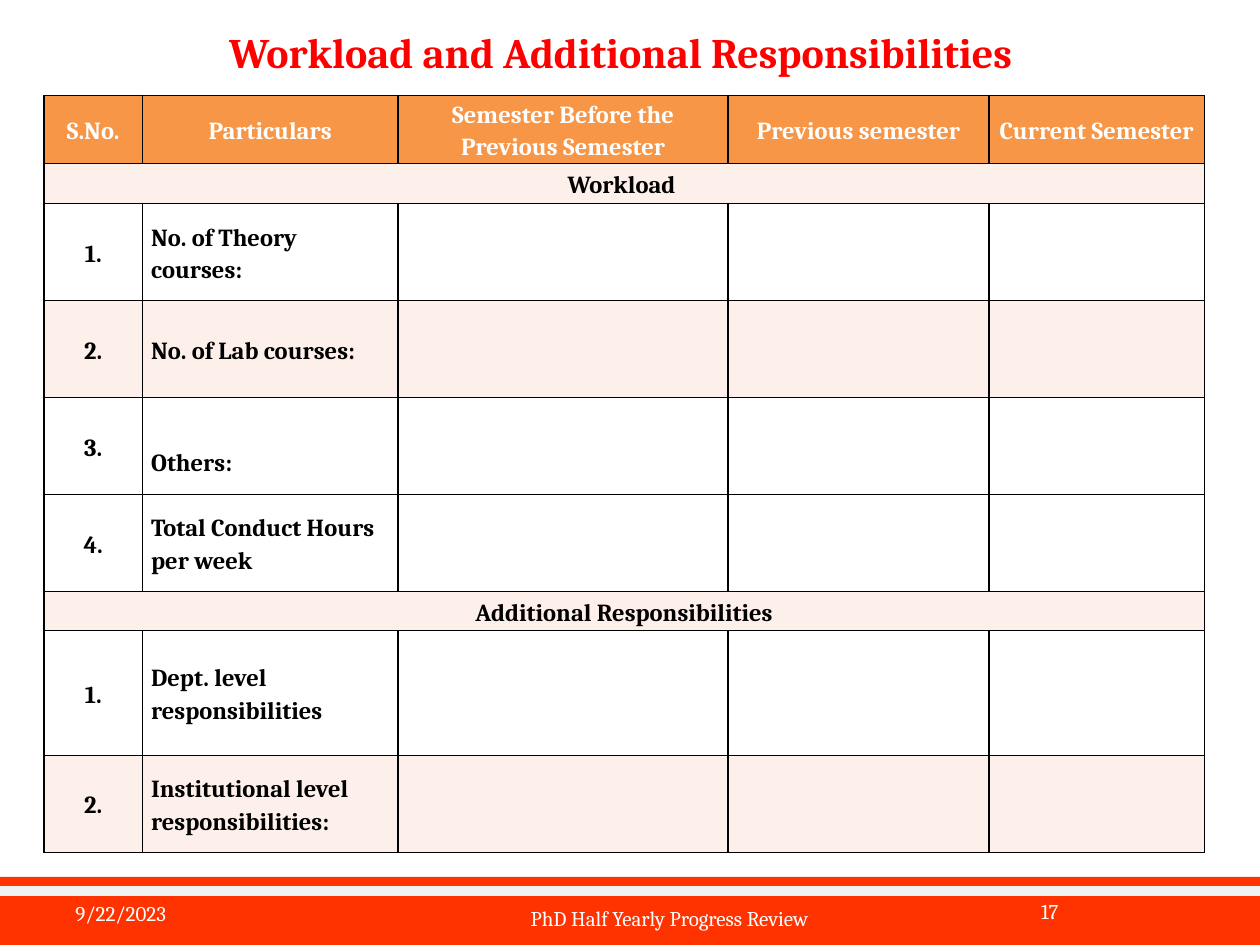
from lxml.etree import SubElement
from pptx import Presentation
from pptx.dml.color import RGBColor
from pptx.enum.shapes import MSO_CONNECTOR, MSO_SHAPE
from pptx.enum.text import MSO_ANCHOR, PP_ALIGN
from pptx.oxml.ns import qn
from pptx.util import Inches, Pt

RED = RGBColor(0xFF, 0x00, 0x00)
BAND = RGBColor(0xFF, 0x33, 0x00)
GRAY = RGBColor(0xF2, 0xF2, 0xF2)
ORANGE = RGBColor(0xF7, 0x96, 0x46)
PINK = RGBColor(0xFD, 0xEF, 0xE9)
WHITE = RGBColor(0xFF, 0xFF, 0xFF)
BLACK = RGBColor(0x00, 0x00, 0x00)


def write(frame, text, size, color, align, bold=False):
    para = frame.paragraphs[0]
    para.alignment = align
    run = para.add_run()
    run.text = text
    font = run.font
    font.name, font.size, font.bold = "Cambria", Pt(size), bold
    font.color.rgb = color
    return para


def border(cell):
    props = cell._tc.get_or_add_tcPr()
    for side in ("lnL", "lnR", "lnT", "lnB"):
        line = SubElement(props, qn(f"a:{side}"), w=str(Pt(1)))
        fill = SubElement(line, qn("a:solidFill"))
        SubElement(fill, qn("a:srgbClr"), val=str(BLACK))


prs = Presentation()
prs.slide_width, prs.slide_height = Inches(10), Inches(7.5)
slide = prs.slides.add_slide(prs.slide_layouts[6])
shapes = slide.shapes

# Footer band with its light stripe
band = shapes.add_shape(MSO_SHAPE.RECTANGLE, Inches(0), Inches(6.96),
                        Inches(10.02), Inches(0.57))
band.shadow.inherit = False
band.fill.solid()
band.fill.fore_color.rgb = BAND
band.line.fill.background()
stripe = shapes.add_connector(MSO_CONNECTOR.STRAIGHT, Inches(-0.02),
                              Inches(7.07), Inches(10), Inches(7.07))
stripe.line.color.rgb = GRAY
stripe.line.width = Pt(6)
SubElement(stripe._element.spPr, qn("a:effectLst"))

# Footer texts and title
LEFT, MID, RIGHT = PP_ALIGN.LEFT, PP_ALIGN.CENTER, PP_ALIGN.RIGHT
texts = [
    ("9/22/2023", (0.5, 7.1, 2.33, 0.4), 12, WHITE, LEFT),
    ("17", (7.33, 7.08, 1.17, 0.4), 12, WHITE, RIGHT),
    ("PhD Half Yearly Progress Review", (3.42, 7.14, 3.79, 0.4), 12, WHITE, MID),
    ("Workload and Additional Responsibilities", (0.28, 0.14, 9.29, 0.54),
     24, RED, MID),
]
for text, place, size, color, align in texts:
    box = shapes.add_textbox(*map(Inches, place))
    frame = box.text_frame
    frame.word_wrap = True
    title = color == RED
    frame.vertical_anchor = MSO_ANCHOR.MIDDLE if title else MSO_ANCHOR.TOP
    write(frame, text, size, color, align, title)

# Table rows: height, fill, texts
rows = [
    (0.46, ORANGE, ["S.No.", "Particulars", "Semester Before the Previous Semester",
                    "Previous semester", "Current Semester"]),
    (0.32, PINK, ["Workload "]),
    (0.77, WHITE, ["1.", "No. of Theory courses:"]),
    (0.77, PINK, ["2.", "No. of Lab courses:"]),
    (0.77, WHITE, ["3.", "Others:"]),
    (0.77, WHITE, ["4.", "Total Conduct Hours per week"]),
    (0.31, PINK, ["Additional Responsibilities"]),
    (0.99, WHITE, ["1.", "Dept. level responsibilities"]),
    (0.77, PINK, ["2.", "Institutional level responsibilities:"]),
]
widths = [0.78, 2.03, 2.62, 2.07, 1.71]
table = shapes.add_table(len(rows), len(widths), Inches(0.35), Inches(0.76),
                         Inches(sum(widths)), Inches(5.96)).table
for col, width in zip(table.columns, widths):
    col.width = Inches(width)

for r, (height, fill, words) in enumerate(rows):
    table.rows[r].height = Inches(height)
    if len(words) == 1:
        table.cell(r, 0).merge(table.cell(r, len(widths) - 1))
    for c in range(len(widths)):
        cell = table.cell(r, c)
        border(cell)
        cell.fill.solid()
        cell.fill.fore_color.rgb = fill
        cell.vertical_anchor = MSO_ANCHOR.MIDDLE
        cell.margin_left = cell.margin_right = Inches(0.07)
        cell.margin_top = cell.margin_bottom = 0
        if c < len(words):
            # Row labels sit left, all other text is centred
            align = LEFT if c == 1 and r > 0 else MID
            color = WHITE if r == 0 else BLACK
            para = write(cell.text_frame, words[c], 14, color, align, True)
            para.line_spacing = 1.15

# "Others:" sits one line lower
table.cell(4, 1).margin_top = Inches(0.24)

prs.save("out.pptx")
